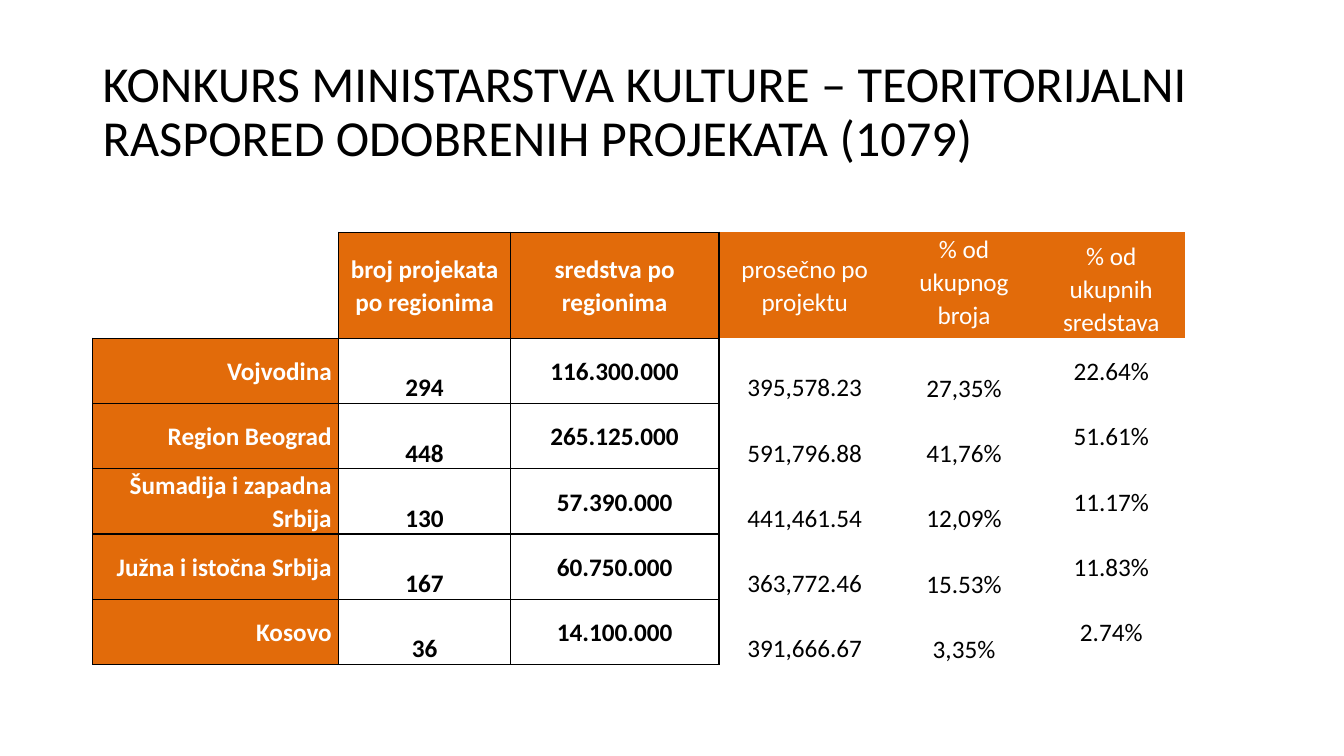
from dataclasses import dataclass

from lxml.etree import SubElement
from pptx import Presentation
from pptx.dml.color import RGBColor
from pptx.enum.text import MSO_ANCHOR as Anchor, PP_ALIGN as Align
from pptx.oxml.ns import qn
from pptx.util import Cm, Pt

COLOURS = {"orange": "E26B0A", "white": "FFFFFF", "black": "000000"}
TITLE = "KONKURS MINISTARSTVA KULTURE – TEORITORIJALNI RASPORED ODOBRENIH PROJEKATA (1079)"
HEADER_HEIGHT, REGION_HEIGHT = 2.67, 1.61
NO_STYLE_NO_GRID = "{2D5ABB26-0587-4C30-8999-92F81FD0307C}"


@dataclass
class Column:
    header: str
    width: float
    bold: bool = False
    header_anchor: Anchor = Anchor.MIDDLE
    anchor: Anchor = Anchor.MIDDLE
    top_margin: float = 0
    sides: str = ""
    header_sides: str = ""


COLUMNS = [
    Column("", 6.2, bold=True, sides="LRTB", header_sides="RB"),
    Column("broj projekata po regionima", 4.32, bold=True, anchor=Anchor.BOTTOM,
           sides="LRTB", header_sides="LRTB"),
    Column("sredstva po regionima", 5.26, bold=True, sides="LRTB", header_sides="LRTB"),
    Column("prosečno po projektu", 4.32, anchor=Anchor.BOTTOM, sides="L", header_sides="L"),
    Column("% od ukupnog broja", 3.71, header_anchor=Anchor.TOP, anchor=Anchor.TOP,
           top_margin=0.83),
    Column("% od ukupnih sredstava", 3.71, header_anchor=Anchor.BOTTOM),
]
REGIONS = [
    ("Vojvodina", "294", "116.300.000", "395,578.23", "27,35%", "22.64%"),
    ("Region Beograd", "448", "265.125.000", "591,796.88", "41,76%", "51.61%"),
    ("Šumadija i zapadna Srbija", "130", "57.390.000", "441,461.54", "12,09%", "11.17%"),
    ("Južna i istočna Srbija", "167", "60.750.000", "363,772.46", "15.53%", "11.83%"),
    ("Kosovo", "36", "14.100.000", "391,666.67", "3,35%", "2.74%"),
]


def set_all(target, formats: dict) -> None:
    for name, value in formats.items():
        setattr(target, name, value)


def write(para, text: str, size: float, colour: str, bold: bool = False) -> None:
    span = para.add_run()
    span.text = text
    set_all(span.font, {"name": "Calibri", "size": Pt(size), "bold": bold})
    span.font.color.rgb = RGBColor.from_string(COLOURS[colour])


def draw_borders(cell, sides: str) -> None:
    """Draw a thin black line on each named side and none on the others."""
    properties = cell._tc.get_or_add_tcPr()
    for side in "LRTB":
        line = SubElement(properties, qn(f"a:ln{side}"), w=str(Pt(1)))
        if side in sides:
            fill = SubElement(line, qn("a:solidFill"))
            SubElement(fill, qn("a:srgbClr"), val=COLOURS["black"])
        else:
            SubElement(line, qn("a:noFill"))


def fill_cell(cell, text: str, column: Column, is_header: bool, is_label: bool) -> None:
    set_all(cell, {
        "margin_left": Cm(0.18), "margin_right": Cm(0.18), "margin_bottom": 0,
        "margin_top": 0 if is_header else Cm(column.top_margin),
        "vertical_anchor": column.header_anchor if is_header else column.anchor,
    })
    draw_borders(cell, column.header_sides if is_header else column.sides)
    coloured = bool(text) and (is_header or is_label)
    if coloured:
        cell.fill.solid()
        cell.fill.fore_color.rgb = RGBColor.from_string(COLOURS["orange"])
    else:
        cell.fill.background()
    if text:
        para = cell.text_frame.paragraphs[0]
        set_all(para, {"alignment": Align.RIGHT if is_label else Align.CENTER,
                       "line_spacing": 1.07})
        write(para, text, 18, "white" if coloured else "black", column.bold)


def add_title(page) -> None:
    box = page.shapes.add_textbox(Cm(2.34), Cm(1.02), Cm(29.21), Cm(3.68))
    set_all(box.text_frame, {"word_wrap": True, "vertical_anchor": Anchor.MIDDLE})
    para = box.text_frame.paragraphs[0]
    para.line_spacing = 0.9
    write(para, TITLE, 36, "black")


def add_region_table(page) -> None:
    rows = [tuple(column.header for column in COLUMNS), *REGIONS]
    width = sum(column.width for column in COLUMNS)
    height = HEADER_HEIGHT + REGION_HEIGHT * len(REGIONS)
    frame = page.shapes.add_table(len(rows), len(COLUMNS), Cm(2.34), Cm(5.85),
                                  Cm(width), Cm(height))
    table = frame.table
    set_all(table, {"first_row": False, "horz_banding": False})
    table._tbl.tblPr.find(qn("a:tableStyleId")).text = NO_STYLE_NO_GRID
    for index, column in enumerate(COLUMNS):
        table.columns[index].width = Cm(column.width)
    for row, texts in enumerate(rows):
        table.rows[row].height = Cm(REGION_HEIGHT if row else HEADER_HEIGHT)
        for index, (text, column) in enumerate(zip(texts, COLUMNS)):
            fill_cell(table.cell(row, index), text, column, row == 0, index == 0)


def main() -> None:
    deck = Presentation()
    set_all(deck, {"slide_width": Cm(33.87), "slide_height": Cm(19.05)})
    page = deck.slides.add_slide(deck.slide_layouts[6])
    add_title(page)
    add_region_table(page)
    deck.save("out.pptx")


if __name__ == "__main__":
    main()
